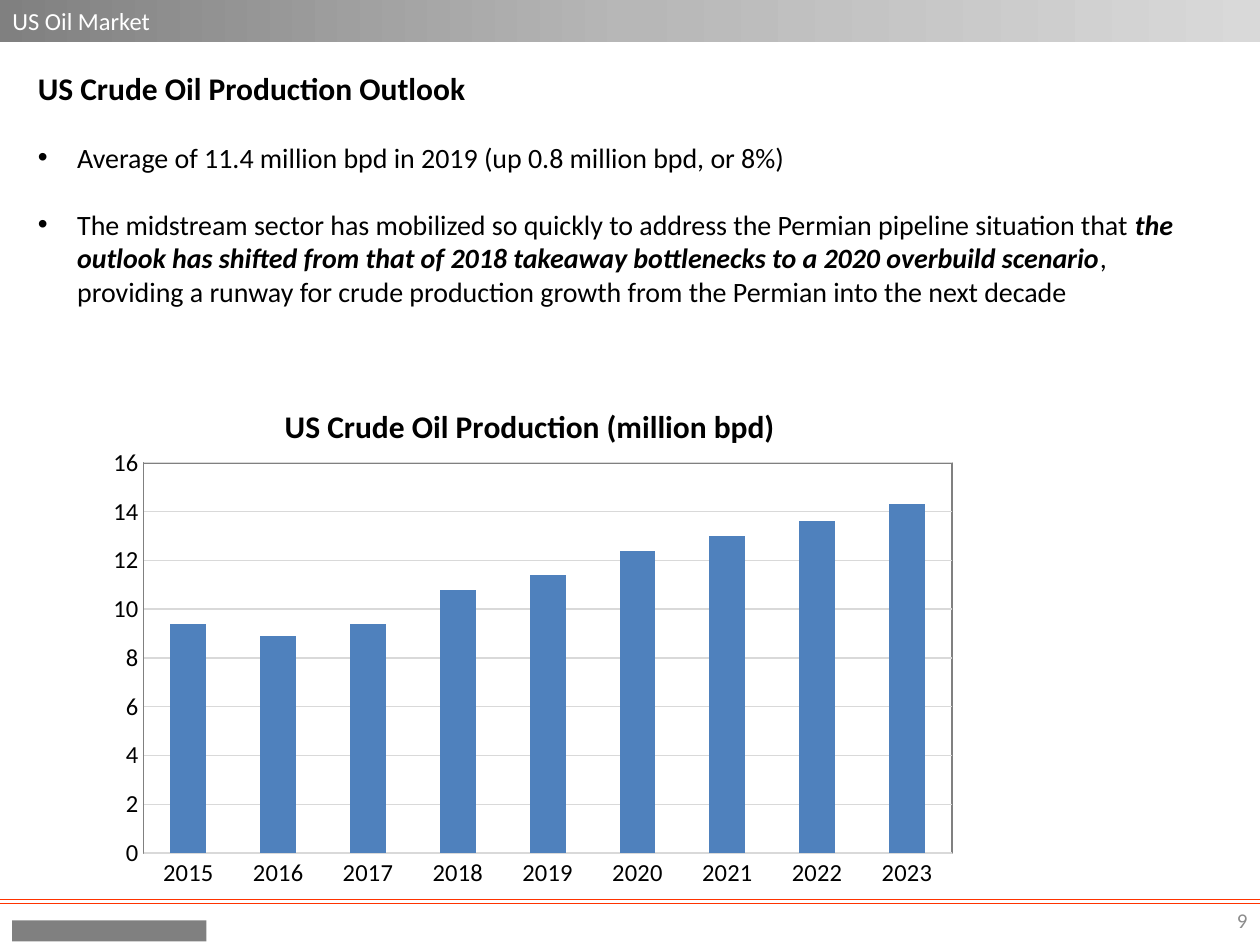
import pptx
import pptx.chart.data
import pptx.dml.color
import pptx.enum.chart
import pptx.enum.dml
import pptx.enum.shapes
import pptx.enum.text
import pptx.oxml
import pptx.oxml.ns
import pptx.util
from lxml import etree

Pt = pptx.util.Pt
qn = pptx.oxml.ns.qn
ALIGN = pptx.enum.text.PP_ALIGN
ANCHOR = pptx.enum.text.MSO_ANCHOR
RECTANGLE = pptx.enum.shapes.MSO_SHAPE.RECTANGLE

# Content: each run is (text, format)
BODY = {"name": "Calibri", "size": 16, "color": "000000"}
BOLD = {**BODY, "bold": True}
STRESS = {**BOLD, "italic": True}

SECTION = [("US Oil Market", {**BODY, "size": 14, "color": "FFFFFF"})]
HEADING = [("US Crude Oil Production Outlook", {**BOLD, "size": 18})]
BULLETS = [
    [("Average of 11.4 million bpd in 2019 (up 0.8 million bpd, or 8%)", BODY)],
    [("The midstream sector has mobilized so quickly to address the Permian "
      "pipeline situation that ", BODY),
     ("the outlook has shifted from that of 2018 takeaway bottlenecks to a "
      "2020 overbuild scenario", STRESS),
     (", providing a runway for crude production growth from the Permian "
      "into the next decade", BODY)],
]
PAGE_NUMBER = [("9", {**BODY, "size": 12, "color": "8C8C8C"})]
CHART_TITLE = [("US Crude Oil Production (million bpd)", {**BOLD, "size": 18})]
PRODUCTION = {"2015": 9.4, "2016": 8.9, "2017": 9.4, "2018": 10.8, "2019": 11.4,
              "2020": 12.4, "2021": 13, "2022": 13.6, "2023": 14.3}

# Layout in points
WIDTH, HEIGHT = 720, 540
BAR_GRADIENT = [(0, "808080"), (50, "B7B7B7"), (100, "D9D9D9")]
RULE_TOPS = [514, 516.25]
INDENT = 22.5
BULLET_GAP = 19
CHART_BOX = (36, 228, 516, 286.5)
TITLE_SPOT = {"x": 123.5, "y": 0}
PLOT_SPOT = {"x": 46, "y": 36.5, "w": 462, "h": 223}


def color(value):
    return pptx.dml.color.RGBColor.from_string(value)


def set_font(font, formats):
    for key, value in formats.items():
        if key == "color":
            font.color.rgb = color(value)
        else:
            setattr(font, key, Pt(value) if key == "size" else value)


def set_fill(fill, value):
    fill.solid()
    fill.fore_color.rgb = color(value)


def set_line(line, value, width=0.75):
    set_fill(line.fill, value)
    line.width = Pt(width)
    line.dash_style = pptx.enum.dml.MSO_LINE.SOLID


def add_runs(paragraph, runs):
    for text, formats in runs:
        run = paragraph.add_run()
        run.text = text
        set_font(run.font, formats)


def fill_text(shape, runs, align=ALIGN.LEFT, anchor=ANCHOR.MIDDLE):
    frame = shape.text_frame
    frame.word_wrap = True
    frame.vertical_anchor = anchor
    frame.paragraphs[0].alignment = align
    add_runs(frame.paragraphs[0], runs)
    return frame


def add_text(slide, box, runs, **options):
    shape = slide.shapes.add_textbox(*map(Pt, box))
    return fill_text(shape, runs, **options)


def add_rectangle(slide, box):
    shape = slide.shapes.add_shape(RECTANGLE, *map(Pt, box))
    shape.shadow.inherit = False
    shape.line.fill.background()
    return shape


def add_bullet(frame, runs):
    paragraph = frame.add_paragraph()
    paragraph.space_before = Pt(BULLET_GAP)
    properties = paragraph._p.get_or_add_pPr()
    properties.set("marL", str(Pt(INDENT)))
    properties.set("indent", str(-Pt(INDENT)))
    etree.SubElement(properties, qn("a:buFont"), typeface="Arial")
    etree.SubElement(properties, qn("a:buChar"), char="•")
    add_runs(paragraph, runs)


def add_header(slide):
    bar = add_rectangle(slide, (0, 0, WIDTH, 24))
    bar.fill.gradient()
    bar.fill.gradient_angle = 0
    stops = bar._element.spPr.find(".//" + qn("a:gsLst"))
    for stop in list(stops):
        stops.remove(stop)
    for position, value in BAR_GRADIENT:
        stop = etree.SubElement(stops, qn("a:gs"), pos=str(position * 1000))
        etree.SubElement(stop, qn("a:srgbClr"), val=value)
    fill_text(bar, SECTION)


def add_rule(slide, top):
    rule = slide.shapes.add_connector(pptx.enum.shapes.MSO_CONNECTOR.STRAIGHT,
                                      0, Pt(top), Pt(WIDTH), Pt(top))
    # Without the theme style only the explicit line format applies
    rule._element.remove(rule._element.find(qn("p:style")))
    set_line(rule.line, "FF3300")
    etree.SubElement(rule._element.spPr, qn("a:effectLst"))


def place_in_chart(element, index, spot, **settings):
    """Give a chart part a manual layout, as fractions of the chart size."""
    for old in element.findall(qn("c:layout")):
        element.remove(old)
    layout = etree.Element(qn("c:layout"))
    manual = etree.SubElement(layout, qn("c:manualLayout"))
    settings.update(xMode="edge", yMode="edge")
    for key, value in spot.items():
        settings[key] = value / CHART_BOX[2 if key in "xw" else 3]
    for key, value in settings.items():
        etree.SubElement(manual, qn("c:" + key), val=str(value))
    element.insert(index, layout)


def add_production_chart(slide):
    data = pptx.chart.data.CategoryChartData()
    data.categories = list(PRODUCTION)
    data.add_series("Series 1", list(PRODUCTION.values()))
    chart = slide.shapes.add_chart(
        pptx.enum.chart.XL_CHART_TYPE.COLUMN_STACKED,
        *map(Pt, CHART_BOX), data).chart
    set_font(chart.font, {**BODY, "size": 14})
    chart.has_legend = False
    chart.has_title = True
    add_runs(chart.chart_title.text_frame.paragraphs[0], CHART_TITLE)

    # Columns
    plot = chart.plots[0]
    plot.vary_by_categories = False
    plot.gap_width = 150
    plot.overlap = 100
    set_fill(plot.series[0].format.fill, "4F81BD")

    # Axes
    value_axis = chart.value_axis
    for axis in (chart.category_axis, value_axis):
        axis.major_tick_mark = pptx.enum.chart.XL_TICK_MARK.NONE
        set_font(axis.tick_labels.font, {**BODY, "size": 14, "bold": False})
    set_line(chart.category_axis.format.line, "D9D9D9")
    for key, value in {"minimum_scale": 0, "maximum_scale": 16,
                       "major_unit": 2}.items():
        setattr(value_axis, key, value)
    value_axis.format.line.fill.background()
    set_line(value_axis.major_gridlines.format.line, "D9D9D9")
    value_axis.tick_labels.number_format = "#,##0"
    value_axis.tick_labels.number_format_is_linked = False

    # Title and plot area positions, plot area border
    place_in_chart(chart.chart_title._element, 1, TITLE_SPOT)
    plot_area = chart._chartSpace.chart.plotArea
    place_in_chart(plot_area, 0, PLOT_SPOT, layoutTarget="inner")
    border = etree.SubElement(etree.SubElement(plot_area, qn("c:spPr")),
                              qn("a:ln"), w=str(Pt(0.75)))
    solid = etree.SubElement(border, qn("a:solidFill"))
    etree.SubElement(solid, qn("a:srgbClr"), val="808080")


def main():
    presentation = pptx.Presentation()
    presentation.slide_width, presentation.slide_height = Pt(WIDTH), Pt(HEIGHT)
    slide = presentation.slides.add_slide(presentation.slide_layouts[6])

    # Header, footer rules, plain footer block and page number
    add_text(slide, (552, 511, 168, 29), PAGE_NUMBER, align=ALIGN.RIGHT)
    add_header(slide)
    for top in RULE_TOPS:
        add_rule(slide, top)
    set_fill(add_rectangle(slide, (7, 526, 111, 12)).fill, "808080")

    # Outlook text
    frame = add_text(slide, (14.5, 36, 687.5, 162), HEADING, anchor=ANCHOR.TOP)
    for runs in BULLETS:
        add_bullet(frame, runs)

    add_production_chart(slide)
    presentation.save("out.pptx")


if __name__ == "__main__":
    main()
